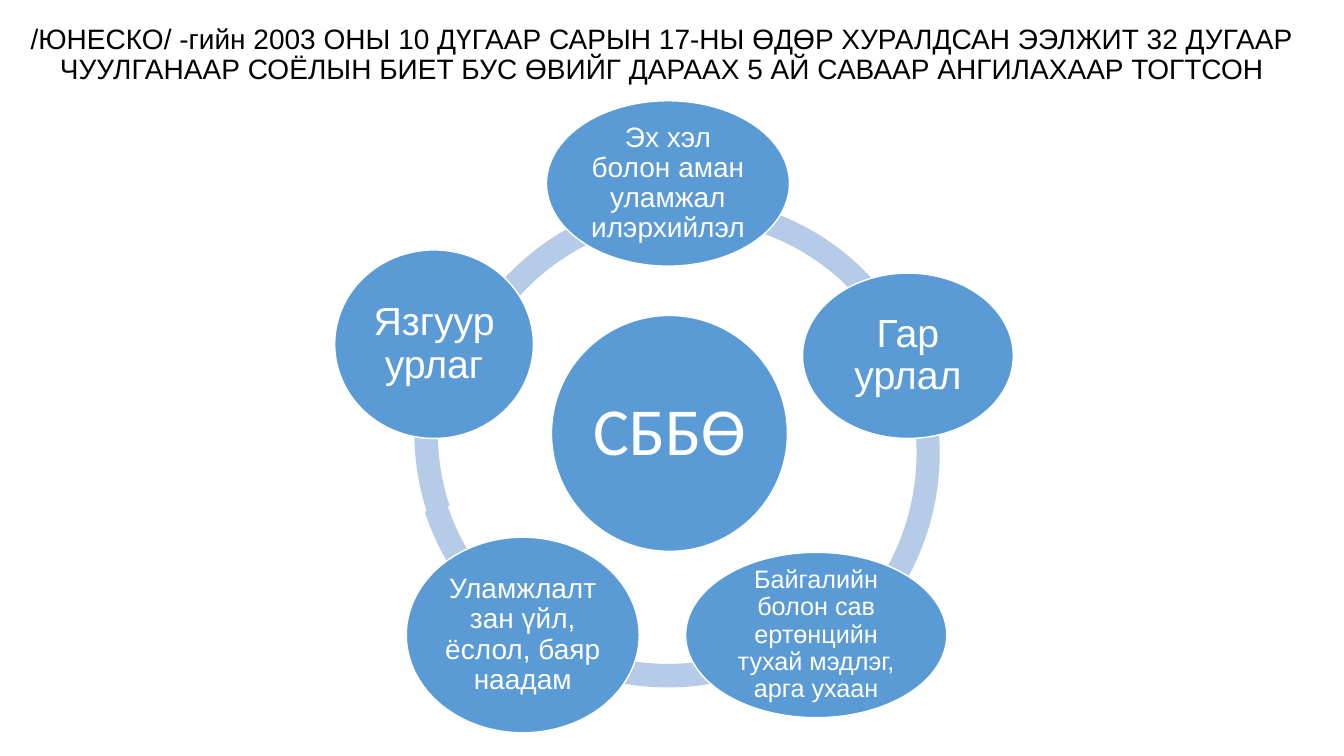
from pptx import Presentation
from pptx.dml.color import RGBColor
from pptx.enum import shapes, text
from pptx.util import Inches, Pt

TITLE = ("/ЮНЕСКО/ -гийн 2003 ОНЫ 10 ДҮГААР САРЫН 17-НЫ ӨДӨР ХУРАЛДСАН ЭЭЛЖИТ 32 ДУГААР "
         "ЧУУЛГАНААР СОЁЛЫН БИЕТ БУС ӨВИЙГ ДАРААХ 5 АЙ САВААР АНГИЛАХААР ТОГТСОН")
COLORS = {"ring": "B5CBE7", "oval": "5B9BD5", "white": "FFFFFF", "title": "000000"}
RING_THICKNESS = 0.046
# left, top, width, height, start angle, end angle
ARCS = [
    (4.09, 1.76, 5.07, 5.07, 120.41, 162.03),
    (4.09, 1.75, 5.07, 5.07, 75.41, 120.29),
    (4.1, 1.76, 5.07, 5.07, 32.4, 75.6),
    (4.33, 1.96, 4.99, 5.07, 205.3, 32.57),
    (4.11, 1.76, 5.07, 5.07, 161.66, 205.2),
]
# text, left, top, width, height, size, font, inset
OVALS = [
    ("СББӨ", 5.47, 3.13, 2.34, 2.34, 48, "Calibri", 0.07),
    ("Эх хэл болон аман уламжал илэрхийлэл", 5.42, 1, 2.41, 1.64, 20, "Arial", 0.03),
    ("Гар урлал", 7.96, 2.71, 2.09, 1.64, 28, "Arial", 0.04),
    ("Байгалийн болон сав ертөнцийн тухай мэдлэг, арга ухаан",
     6.8, 5.48, 2.59, 1.64, 18, "Arial", 0.03),
    ("Уламжлалт зан үйл, ёслол, баяр наадам", 4.03, 5.33, 2.31, 1.94, 20, "Arial", 0.03),
    ("Язгуур урлаг", 3.32, 2.48, 1.97, 1.87, 28, "Arial", 0.04),
]


def rgb(name):
    return RGBColor.from_string(COLORS[name])


def add_shape(s, kind, box, fill):
    sp = s.shapes.add_shape(kind, *map(Inches, box))
    sp.shadow.inherit = False
    sp.fill.solid()
    sp.fill.fore_color.rgb = rgb(fill)
    return sp


def write(sp, words, size, font, color):
    tf = sp.text_frame
    tf.text = words
    tf.word_wrap = True
    tf.auto_size = text.MSO_AUTO_SIZE.NONE
    tf.vertical_anchor = text.MSO_ANCHOR.MIDDLE
    p = tf.paragraphs[0]
    p.alignment = text.PP_ALIGN.CENTER
    p.line_spacing = 0.9
    r = p.runs[0]
    r.font.size = Pt(size)
    r.font.name = font
    r.font.color.rgb = rgb(color)
    return tf


def main():
    prs = Presentation()
    prs.slide_width, prs.slide_height = Inches(13.33), Inches(7.5)
    s = prs.slides.add_slide(prs.slide_layouts[5])

    title = s.shapes.title
    title.left, title.top, title.width, title.height = map(Inches, (0, 0.19, 13.13, 0.72))
    write(title, TITLE, 20, "Arial", "title")

    for *box, start, end in ARCS:
        sp = add_shape(s, shapes.MSO_SHAPE.BLOCK_ARC, box, "ring")
        sp.line.fill.background()
        for i, value in enumerate((start * 0.6, end * 0.6, RING_THICKNESS)):
            sp.adjustments[i] = value

    for words, *box, size, font, inset in OVALS:
        sp = add_shape(s, shapes.MSO_SHAPE.OVAL, box, "oval")
        sp.line.color.rgb = rgb("white")
        sp.line.width = Pt(1)
        tf = write(sp, words, size, font, "white")
        tf.margin_left = tf.margin_right = tf.margin_top = tf.margin_bottom = Inches(inset)

    prs.save("out.pptx")


if __name__ == "__main__":
    main()
